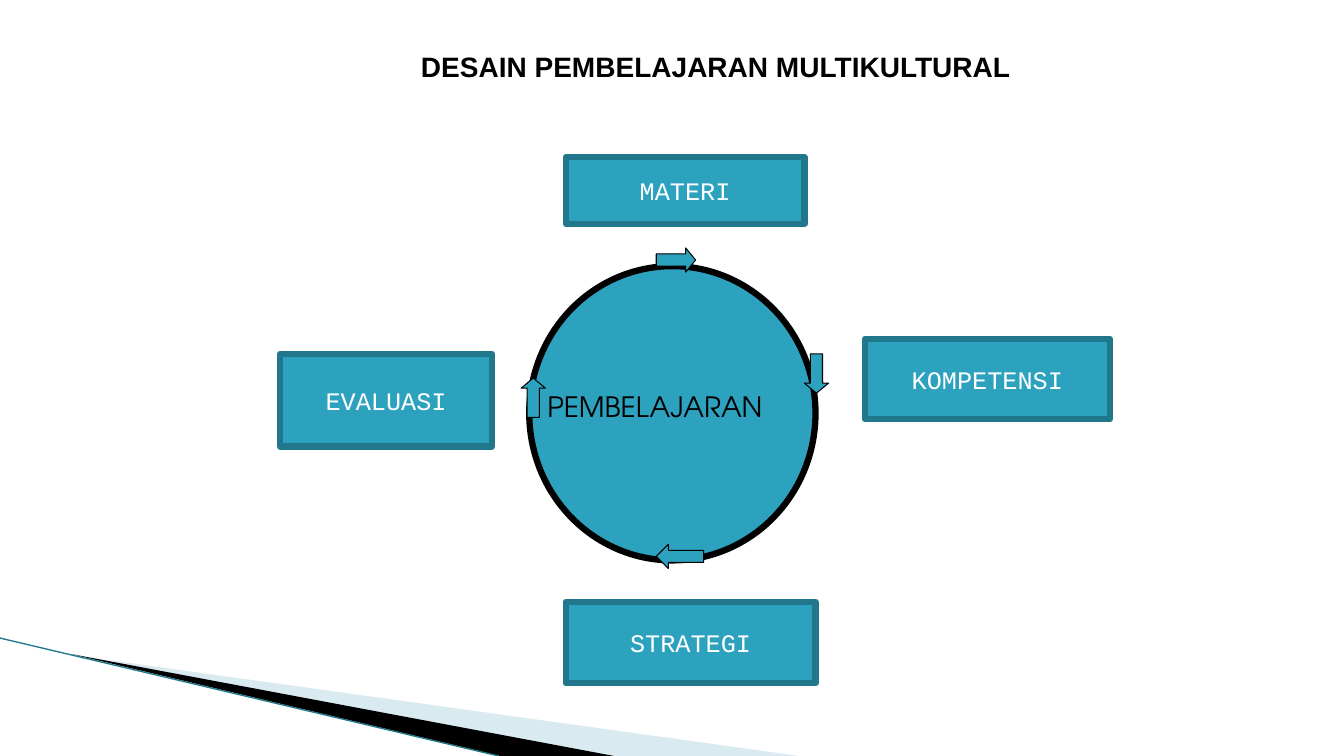
import pptx
import pptx.util
import pptx.dml.color
import pptx.enum.shapes
import pptx.enum.text
import pptx.oxml.ns
import lxml.etree

SHAPE = pptx.enum.shapes.MSO_SHAPE
ALIGN = pptx.enum.text.PP_ALIGN
MIDDLE = pptx.enum.text.MSO_ANCHOR.MIDDLE
WIDTH, HEIGHT = pptx.util.Inches(13.333), pptx.util.Inches(7.5)
COLORS = {"teal": "2DA2BF", "edge": "21788D", "mist": "A0CBDC",
          "black": "000000", "white": "FFFFFF"}

CARDS = [
    ("STRATEGI", (42.08, 79.6, 18.6, 10.8)),
    ("KOMPETENSI", (64.35, 44.8, 18.23, 10.67)),
    ("MATERI", (42.08, 20.8, 17.78, 8.8)),
    ("EVALUASI", (20.85, 46.8, 15.75, 12.27)),
]
ARROWS = [
    (SHAPE.DOWN_ARROW, (59.85, 46.8, 1.8, 5.2), 0.41),
    (SHAPE.UP_ARROW, (38.78, 50, 1.8, 5.2), 0.42),
    (SHAPE.RIGHT_ARROW, (48.83, 32.8, 2.93, 3.2), 0.41),
    (SHAPE.LEFT_ARROW, (48.83, 72, 3.53, 3.2), 0.5),
]
WEDGES = [
    ("mist", [(5.48, 86.67), (59.48, 100), (45.6, 100)], 40),
    ("black", [(5.33, 86.53), (45.68, 100), (37.2, 100)], 100),
]


def rgb(name):
    """Return the named colour."""
    return pptx.dml.color.RGBColor.from_string(COLORS[name])


def point(x, y):
    """Turn percentages of the slide into a position."""
    return int(WIDTH * x / 100), int(HEIGHT * y / 100)


def place(box):
    """Turn a box in percentages into left, top, width and height."""
    return point(*box[:2]) + point(*box[2:])


def add_child(parent, tag, **attrs):
    """Append a DrawingML element to a parent element."""
    return lxml.etree.SubElement(parent, pptx.oxml.ns.qn(tag), **attrs)


def write(s, text, font, size, color, align=ALIGN.CENTER, bold=False):
    """Put one formatted line of text in a shape."""
    tf = s.text_frame
    tf.text = text
    tf.word_wrap = True
    tf.auto_size = pptx.enum.text.MSO_AUTO_SIZE.NONE
    tf.vertical_anchor = MIDDLE
    p = tf.paragraphs[0]
    p.alignment = align
    p.space_before = pptx.util.Pt(0)
    r = p.runs[0]
    r.font.name = font
    r.font.size = pptx.util.Pt(size)
    r.font.bold = bold
    r.font.color.rgb = rgb(color)


def add_shape(slide, kind, box, line, weight):
    """Add a teal preset shape with an outline."""
    s = slide.shapes.add_shape(kind, *place(box))
    s.shadow.inherit = False
    s.fill.solid()
    s.fill.fore_color.rgb = rgb("teal")
    s.line.color.rgb = rgb(line)
    s.line.width = pptx.util.Pt(weight)
    return s


def add_card(slide, text, box):
    """Add a labelled rectangle with rounded outline joins."""
    s = add_shape(slide, SHAPE.RECTANGLE, box, "edge", 4.33)
    add_child(s.line._get_or_add_ln(), "a:round")
    write(s, text, "Courier New", 18, "white")


def add_arrow(slide, kind, box, head):
    """Add a block arrow with the given head length."""
    s = add_shape(slide, kind, box, "black", 0.75)
    s.adjustments[1] = head


def add_wedge(slide, color, points, opacity):
    """Add a filled triangle in the bottom corner."""
    start, *rest = [point(*p) for p in points]
    builder = slide.shapes.build_freeform(*start)
    builder.add_line_segments(rest)
    s = builder.convert_to_shape()
    s.shadow.inherit = False
    s.fill.solid()
    s.fill.fore_color.rgb = rgb(color)
    s.line.fill.background()
    if opacity < 100:
        fill = s.fill._xPr.find(".//" + pptx.oxml.ns.qn("a:srgbClr"))
        add_child(fill, "a:alpha", val=str(opacity * 1000))


def add_edge(slide, start, end):
    """Add the thin line along the corner wedges."""
    kind = pptx.enum.shapes.MSO_CONNECTOR.STRAIGHT
    s = slide.shapes.add_connector(kind, *point(*start), *point(*end))
    s.line.color.rgb = rgb("edge")
    s.line.width = pptx.util.Pt(0.95)
    add_child(s._element.spPr, "a:effectLst")


def add_title(slide, text, box):
    """Move and format the title placeholder."""
    s = slide.shapes.title
    s.left, s.top, s.width, s.height = place(box)
    write(s, text, "Arial", 20, "black", bold=True)


def add_label(slide, text, box):
    """Add the text inside the circle."""
    s = slide.shapes.add_textbox(*place(box))
    write(s, text, "TeX Gyre Adventor", 20, "black", ALIGN.LEFT)


def main():
    """Build and save the slide."""
    prs = pptx.Presentation()
    prs.slide_width, prs.slide_height = WIDTH, HEIGHT
    slide = prs.slides.add_slide(prs.slide_layouts[5])
    add_title(slide, "DESAIN PEMBELAJARAN MULTIKULTURAL", (28.73, 5.87, 49.05, 5.87))
    for wedge in WEDGES:
        add_wedge(slide, *wedge)
    add_edge(slide, (0, 84.4), (37.1, 100))
    add_shape(slide, SHAPE.OVAL, (39.38, 35.2, 21.3, 38.93), "black", 4.5)
    add_label(slide, "PEMBELAJARAN", (39.98, 50.67, 19.88, 6.27))
    for arrow in ARROWS:
        add_arrow(slide, *arrow)
    for card in CARDS:
        add_card(slide, *card)
    prs.save("out.pptx")


if __name__ == "__main__":
    main()
